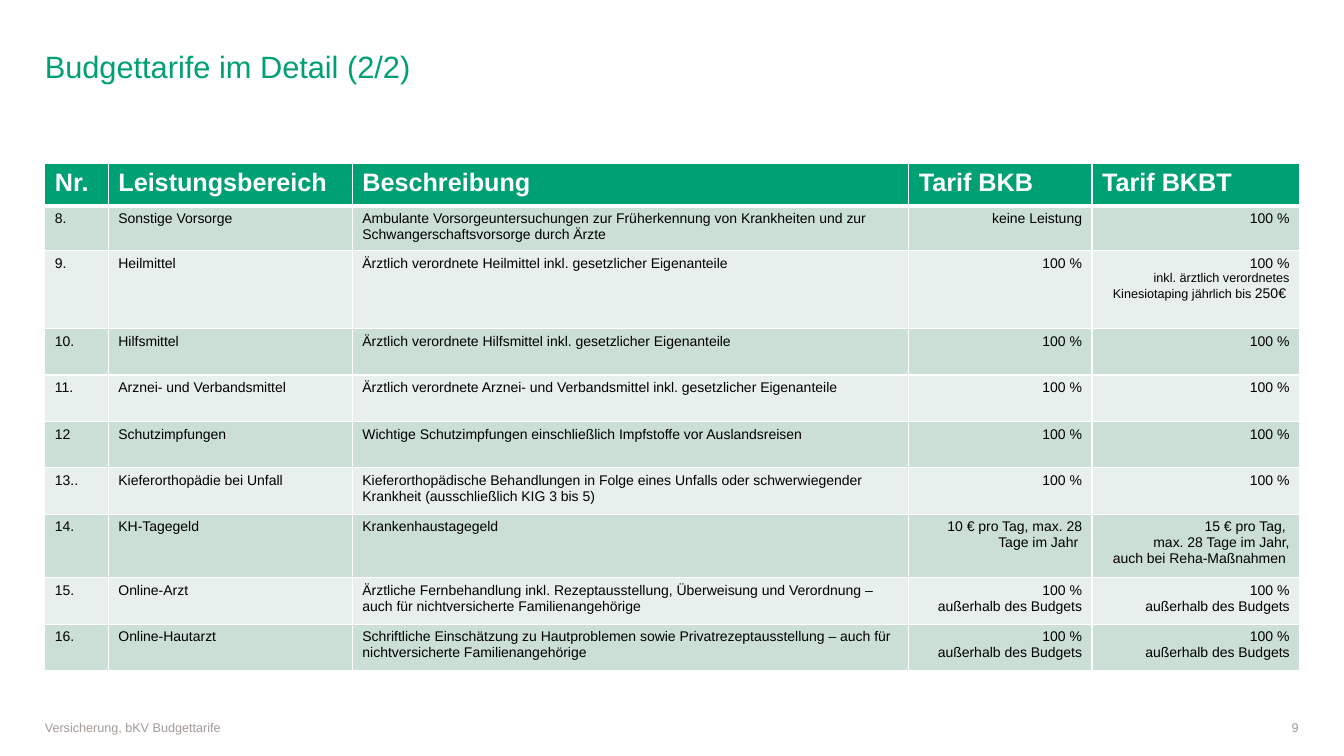
from pptx import Presentation
from pptx.dml.color import RGBColor
from pptx.enum.text import MSO_ANCHOR as Anchor, PP_ALIGN as Align
from pptx.oxml import parse_xml
from pptx.oxml.ns import nsdecls
from pptx.util import Cm, Pt

GREEN, GREY, WHITE, BLACK = "00A075", "A49B97", "FFFFFF", "000000"
BAND_FILLS = ("CCDFD6", "E7F0EC")

TITLE_FORMAT = {"name": "Arial", "size": Pt(22), "bold": False, "color": GREEN}
FOOTER_FORMAT = {"name": "Arial", "size": Pt(9), "bold": False, "color": GREY}
HEADER_FORMAT = {"name": "Arial", "size": Pt(18), "bold": True, "color": WHITE}
CELL_FORMAT = {"name": "Arial", "size": Pt(10), "bold": False, "color": BLACK}
SMALL_FORMAT = {**CELL_FORMAT, "size": Pt(9)}

COLUMN_WIDTHS = (1.6, 6.15, 14.02, 4.62, 5.23)
ROW_HEIGHTS = (1.07, 1.13, 1.96, 1.17, 1.17, 1.17, 1.17, 1.6, 1.17, 1.17)
FULL = ["100 %"]
OUTSIDE_BUDGET = ["100 %", "außerhalb des Budgets"]
HEADERS = ("Nr.", "Leistungsbereich", "Beschreibung", "Tarif BKB", "Tarif BKBT")

# Each cell is a list of paragraphs; a paragraph is text or a list of formatted runs
KINESIO_NOTE = [
    ("inkl. ärztlich verordnetes Kinesiotaping jährlich bis ", SMALL_FORMAT),
    ("250€", CELL_FORMAT),
    (" ", SMALL_FORMAT),
]
BENEFITS = (
    ("8.", "Sonstige Vorsorge",
     "Ambulante Vorsorgeuntersuchungen zur Früherkennung von Krankheiten und zur "
     "Schwangerschaftsvorsorge durch Ärzte", ["keine Leistung"], FULL),
    ("9.", "Heilmittel",
     "Ärztlich verordnete Heilmittel inkl. gesetzlicher Eigenanteile",
     FULL, ["100 %", KINESIO_NOTE]),
    ("10.", "Hilfsmittel",
     "Ärztlich verordnete Hilfsmittel inkl. gesetzlicher Eigenanteile", FULL, FULL),
    ("11.", "Arznei- und Verbandsmittel",
     "Ärztlich verordnete Arznei- und Verbandsmittel inkl. gesetzlicher Eigenanteile",
     FULL, FULL),
    ("12", "Schutzimpfungen",
     "Wichtige Schutzimpfungen einschließlich Impfstoffe vor Auslandsreisen", FULL, FULL),
    ("13..", "Kieferorthopädie bei Unfall",
     "Kieferorthopädische Behandlungen in Folge eines Unfalls oder schwerwiegender "
     "Krankheit (ausschließlich KIG 3 bis 5)", FULL, FULL),
    ("14.", "KH-Tagegeld", "Krankenhaustagegeld",
     ["10 € pro Tag, max. 28 Tage im Jahr "],
     ["15 € pro Tag, ", "max. 28 Tage im Jahr,", "auch bei Reha-Maßnahmen "]),
    ("15.", "Online-Arzt",
     "Ärztliche Fernbehandlung inkl. Rezeptausstellung, Überweisung und Verordnung – "
     "auch für nichtversicherte Familienangehörige", OUTSIDE_BUDGET, OUTSIDE_BUDGET),
    ("16.", "Online-Hautarzt",
     "Schriftliche Einschätzung zu Hautproblemen sowie Privatrezeptausstellung – "
     "auch für nichtversicherte Familienangehörige", OUTSIDE_BUDGET, OUTSIDE_BUDGET),
)


def rgb(hex_color):
    return RGBColor.from_string(hex_color)


def apply_format(font, values):
    for name, value in values.items():
        if name == "color":
            font.color.rgb = rgb(value)
        else:
            setattr(font, name, value)


def write_paragraphs(text_frame, paragraphs, values, align=Align.LEFT):
    for index, content in enumerate(paragraphs):
        paragraph = text_frame.add_paragraph() if index else text_frame.paragraphs[0]
        paragraph.alignment = align
        runs = [(content, values)] if isinstance(content, str) else content
        for text, run_format in runs:
            run = paragraph.add_run()
            run.text = text
            apply_format(run.font, run_format)


def prepare_frame(text_frame, anchor):
    settings = {"margin_left": 0, "margin_top": 0, "margin_right": 0,
                "margin_bottom": 0, "word_wrap": True, "vertical_anchor": anchor}
    for name, value in settings.items():
        setattr(text_frame, name, value)


def place_title(slide, box, text):
    title = slide.shapes.title
    title.left, title.top, title.width, title.height = map(Cm, box)
    prepare_frame(title.text_frame, Anchor.TOP)
    write_paragraphs(title.text_frame, [text], TITLE_FORMAT)
    title.text_frame.paragraphs[0].line_spacing = 0.9


def style_cell(cell, fill, top, bottom):
    properties = cell._tc.get_or_add_tcPr()
    for side, width in (("L", 1), ("R", 1), ("T", top), ("B", bottom)):
        properties.append(parse_xml(
            f'<a:ln{side} {nsdecls("a")} w="{Pt(width)}"><a:solidFill>'
            f'<a:srgbClr val="{WHITE}"/></a:solidFill></a:ln{side}>'))
    cell.fill.solid()
    cell.fill.fore_color.rgb = rgb(fill)


def add_benefit_table(slide, box):
    rows = (HEADERS, *BENEFITS)
    table = slide.shapes.add_table(len(rows), len(HEADERS), *map(Cm, box)).table
    for column, width in zip(table.columns, COLUMN_WIDTHS):
        column.width = Cm(width)
    for row_index, (row, height) in enumerate(zip(rows, ROW_HEIGHTS)):
        table.rows[row_index].height = Cm(height)
        is_header = row_index == 0
        fill = GREEN if is_header else BAND_FILLS[(row_index - 1) % 2]
        values = HEADER_FORMAT if is_header else CELL_FORMAT
        for column_index, content in enumerate(row):
            cell = table.cell(row_index, column_index)
            style_cell(cell, fill, 3 if row_index == 1 else 1, 3 if is_header else 1)
            paragraphs = [content] if isinstance(content, str) else content
            align = Align.RIGHT if column_index >= 3 and not is_header else Align.LEFT
            write_paragraphs(cell.text_frame, paragraphs, values, align)


def add_footer(slide, box, text, number):
    left, top, width, height = box
    number_width = 1.3
    parts = ((text, left, 13, Align.LEFT),
             (number, left + width - number_width, number_width, Align.RIGHT))
    for content, part_left, part_width, align in parts:
        text_box = slide.shapes.add_textbox(
            Cm(part_left), Cm(top), Cm(part_width), Cm(height))
        prepare_frame(text_box.text_frame, Anchor.BOTTOM)
        write_paragraphs(text_box.text_frame, [content], FOOTER_FORMAT, align)


def main():
    presentation = Presentation()
    presentation.slide_width, presentation.slide_height = Cm(33.87), Cm(19.05)
    slide = presentation.slides.add_slide(presentation.slide_layouts[5])

    # Title, tariff table and footer
    place_title(slide, (1.13, 1.32, 31.6, 1.98), "Budgettarife im Detail (2/2)")
    add_benefit_table(slide, (1.13, 4.12, sum(COLUMN_WIDTHS), sum(ROW_HEIGHTS)))
    add_footer(slide, (1.13, 18.19, 31.6, 0.33), "Versicherung, bKV Budgettarife", "9")

    presentation.save("out.pptx")


if __name__ == "__main__":
    main()
